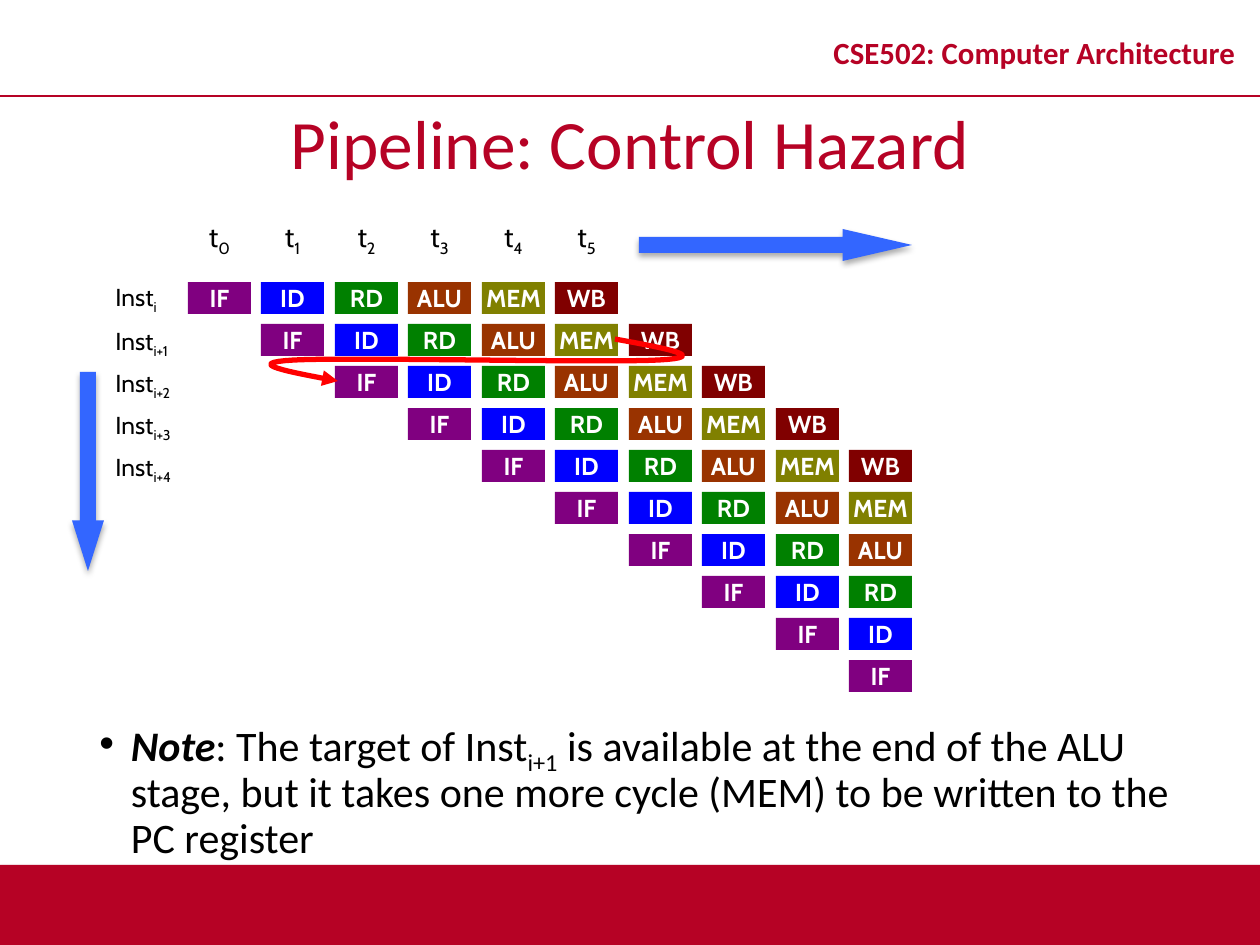
from pptx import Presentation
from pptx.dml.color import RGBColor
from pptx.enum.shapes import MSO_CONNECTOR, MSO_SHAPE as SHAPE
from pptx.enum.text import MSO_ANCHOR as ANCHOR, PP_ALIGN as ALIGN
from pptx.oxml import parse_xml
from pptx.oxml.ns import nsdecls
from pptx.util import Pt
from lxml.etree import SubElement

PX = 914400 / 126
COLORS = {
    "crimson": "B60225", "blue": "3366FF", "red": "FF0000",
    "black": "000000", "white": "FFFFFF",
    "IF": "800080", "ID": "0000FF", "RD": "008000",
    "ALU": "993300", "MEM": "808000", "WB": "800000",
}


def px(*lengths):
    return [round(length * PX) for length in lengths]


def write(box, *spans, size=14, font="Cabin", color="black", bold=False,
          align=ALIGN.LEFT, anchor=ANCHOR.TOP, wrap=True, inset=6, spacing=None):
    """Write spans, each a string or a (string, style) pair, into a box."""
    frame = box.text_frame
    frame.word_wrap, frame.vertical_anchor = wrap, anchor
    frame.margin_top = frame.margin_bottom = px(inset)[0]
    para = frame.paragraphs[0]
    para.alignment, para.line_spacing = align, spacing
    for item in spans:
        text, style = (item, "") if isinstance(item, str) else item
        span = para.add_run()
        span.text = text
        span.font.size, span.font.name = Pt(size), font
        span.font.bold = bold or style == "strong"
        span.font.italic = style == "strong"
        span.font.color.rgb = RGBColor.from_string(COLORS[color])
        if style == "sub":
            span.font._element.set("baseline", "-25000")
    return para


deck = Presentation()
deck.slide_width, deck.slide_height = px(1260, 945)
page = deck.slides.add_slide(deck.slide_layouts[6])
shapes = page.shapes

# Footer band and the two time/instruction arrows, all with soft shadows
for kind, place, color, adjust, (alpha, blur, drop) in [
    (SHAPE.RECTANGLE, (0, 865, 1260, 80), "crimson", [], (35, 3.1, 1.8)),
    (SHAPE.RIGHT_ARROW, (639, 229, 273, 32), "blue", [0.5, 2.17], (32, 3.5, 2.2)),
    (SHAPE.DOWN_ARROW, (72, 372, 32, 199), "blue", [0.5, 1.58], (32, 3.5, 2.2)),
]:
    block = shapes.add_shape(kind, *px(*place))
    block.fill.solid()
    block.fill.fore_color.rgb = RGBColor.from_string(COLORS[color])
    block.line.fill.background()
    for index, value in enumerate(adjust):
        block.adjustments[index] = value
    block.shadow.inherit = False
    block._element.spPr.find("{*}effectLst").append(parse_xml(
        f'<a:outerShdw {nsdecls("a")} blurRad="{Pt(blur)}" dist="{Pt(drop)}" '
        f'dir="5400000" rotWithShape="0"><a:srgbClr val="{COLORS["black"]}">'
        f'<a:alpha val="{alpha * 1000}"/></a:srgbClr></a:outerShdw>'))

# Header rule, course name and title
x1, y1, x2, y2 = px(0, 96, 1260, 96)
rule = shapes.add_connector(MSO_CONNECTOR.STRAIGHT, x1, y1, x2, y2)
rule.line.color.rgb = RGBColor.from_string(COLORS["crimson"])
rule.line.width = Pt(1)
SubElement(rule._element.spPr, "{http://schemas.openxmlformats.org/drawingml/2006/main}effectLst")

write(shapes.add_textbox(*px(809, 16, 451, 79)), "CSE502: Computer Architecture",
      size=17.6, font="Calibri", color="crimson", bold=True,
      align=ALIGN.CENTER, anchor=ANCHOR.MIDDLE, spacing=0.8)
write(shapes.add_textbox(*px(87, 93, 1086, 97)), "Pipeline: Control Hazard",
      size=39.6, font="Calibri", color="crimson",
      align=ALIGN.CENTER, anchor=ANCHOR.MIDDLE)

# Pipeline grid: each instruction starts one cycle after the one above
STAGES = ["IF", "ID", "RD", "ALU", "MEM", "WB"]
CYCLES = 10
LEFT, TOP, CELL_WIDTH, CELL_HEIGHT, ROW_STEP = 188, 282, 63, 32, 42
columns = [LEFT + cycle * 147 // 2 for cycle in range(CYCLES)]

for cycle in range(6):
    box = shapes.add_textbox(*px(columns[cycle], 214, CELL_WIDTH, 47))
    write(box, "t", (str(cycle), "sub"), size=16, align=ALIGN.CENTER)

for row, (suffix, top) in enumerate(
        [("i", 282), ("i+1", 326), ("i+2", 368), ("i+3", 410), ("i+4", 452)]):
    box = shapes.add_textbox(*px(103, top, 116 if row else 68, 30))
    write(box, "Inst", (suffix, "sub"), inset=0)

for row in range(CYCLES):
    for column, stage in zip(columns[row:], STAGES):
        cell = shapes.add_shape(
            SHAPE.RECTANGLE, *px(column, TOP + row * ROW_STEP, CELL_WIDTH, CELL_HEIGHT))
        cell.shadow.inherit = False
        cell.fill.solid()
        cell.fill.fore_color.rgb = RGBColor.from_string(COLORS[stage])
        cell.line.fill.background()
        write(cell, stage, color="white", bold=True, align=ALIGN.CENTER,
              anchor=ANCHOR.MIDDLE, wrap=False)

# Hazard arrow from MEM back to the next IF, sampled along three Bezier curves
knots = [(615, 339), (664, 348), (713, 357), (659, 360), (606, 363),
         (348, 357), (294, 360), (241, 363), (289, 372), (338, 381)]
STEPS = 16
points = []
for first in range(0, 9, 3):
    for step in range(1, STEPS + 1):
        t = step / STEPS
        weights = [(1 - t) ** 3, 3 * t * (1 - t) ** 2, 3 * t * t * (1 - t), t ** 3]
        curve = list(zip(weights, knots[first:first + 4]))
        points.append(px(*(sum(w * knot[axis] for w, knot in curve) for axis in (0, 1))))
builder = shapes.build_freeform(*px(*knots[0]))
builder.add_line_segments(points, close=False)
hazard = builder.convert_to_shape()
hazard.shadow.inherit = False
hazard.fill.background()
hazard.line.color.rgb = RGBColor.from_string(COLORS["red"])
hazard.line.width = Pt(3)
hazard.line._get_or_add_ln().append(
    parse_xml(f'<a:tailEnd {nsdecls("a")} type="triangle"/>'))

# Note
box = shapes.add_textbox(*px(87, 714, 1120, 142))
note = write(
    box, ("Note", "strong"), ": The target of Inst", ("i+1", "sub"),
    " is available at the end of the ALU stage, but it takes one more cycle "
    "(MEM) to be written to the PC register",
    size=24, font="Calibri", spacing=0.9)
bullet = note._p.get_or_add_pPr()
bullet.set("marL", "228600")
bullet.set("indent", "-228600")
bullet.append(parse_xml(f'<a:buFont {nsdecls("a")} typeface="Arial"/>'))
bullet.append(parse_xml(f'<a:buChar {nsdecls("a")} char="•"/>'))

deck.save("out.pptx")
